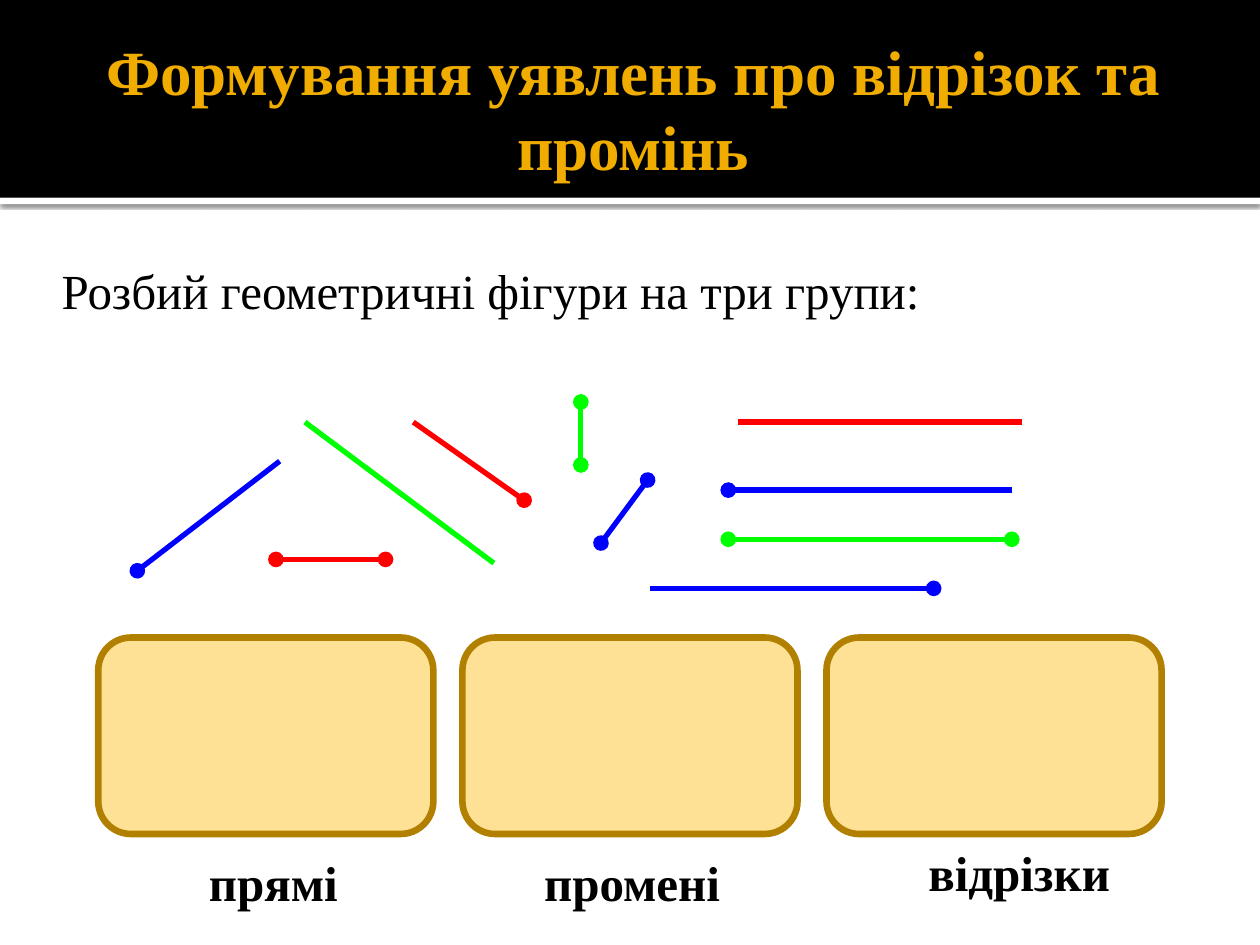
from lxml.etree import SubElement
from pptx import Presentation
from pptx.dml.color import RGBColor
from pptx.enum.shapes import MSO_CONNECTOR, MSO_SHAPE
from pptx.enum.text import MSO_ANCHOR, MSO_AUTO_SIZE, PP_ALIGN
from pptx.oxml.ns import qn
from pptx.util import Inches, Pt

COLORS = {
    "black": "000000", "white": "FFFFFF", "gold": "F0AD00", "cream": "FFE193",
    "brown": "B28000", "blue": "0000FF", "red": "FF0000", "green": "00FF00",
}
RGB = {name: RGBColor.from_string(value) for name, value in COLORS.items()}

prs = Presentation()
prs.slide_width, prs.slide_height = Inches(10), Inches(7.5)
s = prs.slides.add_slide(prs.slide_layouts[5])


def add_box(kind, x, y, w, h, fill):
    sp = s.shapes.add_shape(kind, Inches(x), Inches(y), Inches(w), Inches(h))
    sp.shadow.inherit = False
    sp.fill.solid()
    sp.fill.fore_color.rgb = RGB[fill]
    sp.line.fill.background()
    return sp


def write(tf, text, size, color, bold):
    r = tf.paragraphs[0].add_run()
    r.text = text
    r.font.color.rgb = RGB[color]
    style = {"name": "Times New Roman", "size": Pt(size), "bold": bold}
    for key, value in style.items():
        setattr(r.font, key, value)


strip = add_box(MSO_SHAPE.RECTANGLE, 0, 1.57, 10, 0.05, "white")
effects = strip.element.spPr.find(qn("a:effectLst"))
shadow = SubElement(effects, qn("a:outerShdw"), blurRad=str(Pt(2.5)),
                    dist=str(Pt(0.8)), dir="5400000", rotWithShape="0")
tint = SubElement(shadow, qn("a:srgbClr"), val=COLORS["black"])
SubElement(tint, qn("a:alpha"), val="60000")
add_box(MSO_SHAPE.RECTANGLE, 0, 0, 10, 1.57, "black")

for i in range(3):
    sp = add_box(MSO_SHAPE.ROUNDED_RECTANGLE, 0.78 + 2.89 * i, 5.06, 2.66, 1.56, "cream")
    fill = sp.element.spPr.find(qn("a:solidFill"))
    SubElement(fill[0], qn("a:alpha"), val="98000")
    sp.line.color.rgb = RGB["brown"]
    sp.line.width = Pt(3.78)

START, END = "a:headEnd", "a:tailEnd"
figures = [
    (1.09, 4.53, 2.22, 3.66, "blue", [START]),
    (2.19, 4.44, 3.06, 4.44, "red", [START, END]),
    (2.42, 3.35, 3.92, 4.47, "green", []),
    (3.28, 3.35, 4.16, 3.97, "red", [END]),
    (4.77, 4.31, 5.14, 3.81, "blue", [START, END]),
    (4.61, 3.19, 4.61, 3.69, "green", [START, END]),
    (5.86, 3.35, 8.11, 3.35, "red", []),
    (5.78, 3.89, 8.03, 3.89, "blue", [START]),
    (5.78, 4.28, 8.03, 4.28, "green", [START, END]),
    (5.16, 4.67, 7.41, 4.67, "blue", [END]),
]
for x1, y1, x2, y2, color, dots in figures:
    line = s.shapes.add_connector(MSO_CONNECTOR.STRAIGHT, Inches(x1), Inches(y1),
                                  Inches(x2), Inches(y2))
    line.line.color.rgb = RGB[color]
    line.line.width = Pt(3)
    spPr = line.element.spPr
    for dot in dots:
        SubElement(spPr.find(qn("a:ln")), qn(dot), type="oval")
    SubElement(spPr, qn("a:effectLst"))

captions = [
    ("Розбий геометричні фігури на три групи:", 0.39, 2.02, 7.09, False),
    ("прямі", 1.56, 6.72, 1.24, True),
    ("промені", 4.22, 6.72, 1.61, True),
    ("відрізки", 7.27, 6.64, 1.66, True),
]
for text, x, y, w, bold in captions:
    tf = s.shapes.add_textbox(Inches(x), Inches(y), Inches(w), Inches(0.57)).text_frame
    tf.word_wrap = False
    tf.auto_size = MSO_AUTO_SIZE.SHAPE_TO_FIT_TEXT
    write(tf, text, 28, "black", bold)

title = s.shapes.title
title.element.getparent().append(title.element)
place = {"left": 0.5, "top": 0.17, "width": 9, "height": 1.37}
for key, value in place.items():
    setattr(title, key, Inches(value))
tf = title.text_frame
frame = {
    "word_wrap": True, "auto_size": MSO_AUTO_SIZE.NONE,
    "vertical_anchor": MSO_ANCHOR.MIDDLE, "margin_left": Inches(0.1),
    "margin_right": Inches(0.05), "margin_top": Inches(0.05), "margin_bottom": Inches(0.05),
}
for key, value in frame.items():
    setattr(tf, key, value)
tf.paragraphs[0].alignment = PP_ALIGN.CENTER
write(tf, "Формування уявлень про відрізок та промінь", 36, "gold", True)

prs.save("out.pptx")
